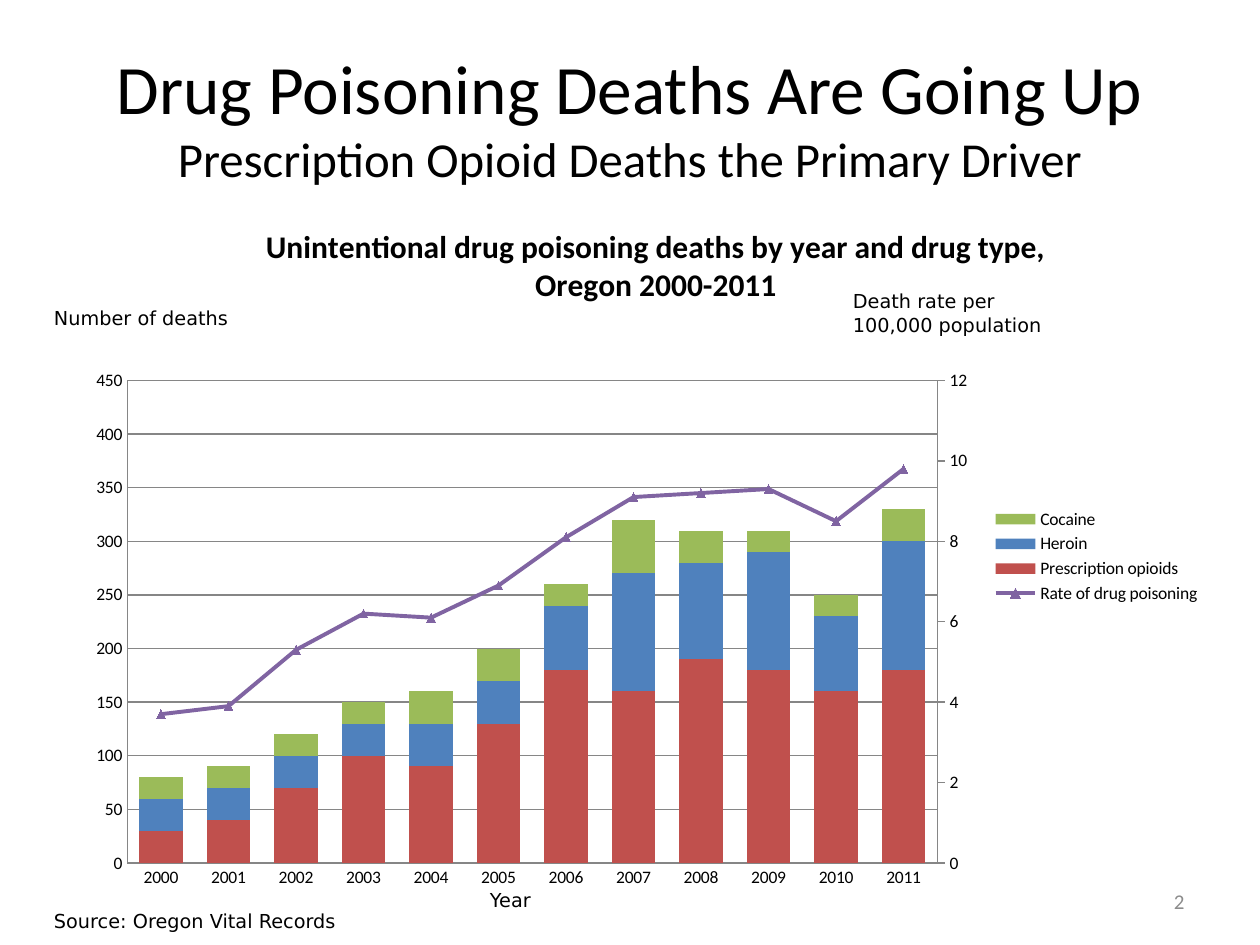
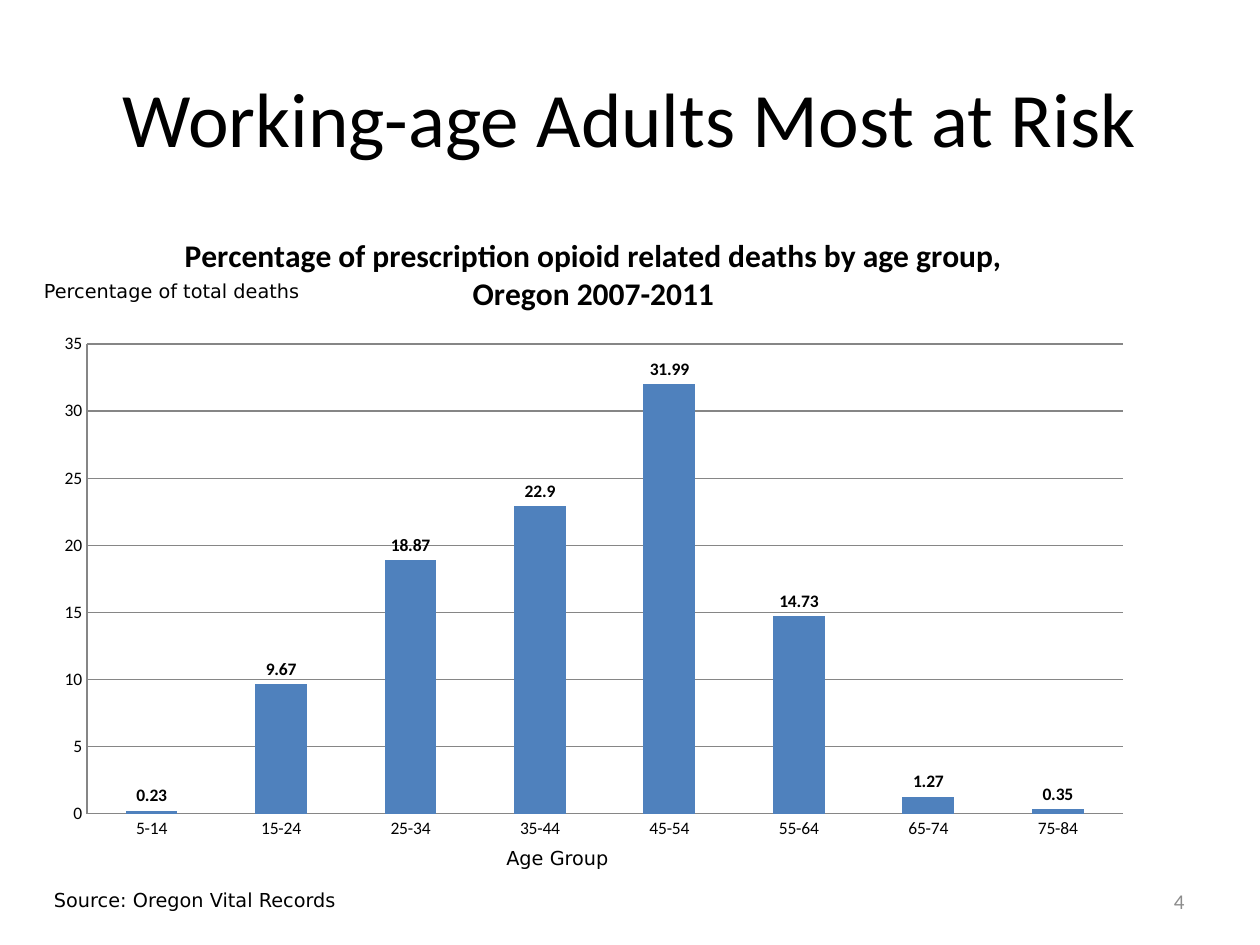
from pptx import Presentation
from pptx import util as u
from pptx.chart.axis import ValueAxis
from pptx.chart.data import CategoryChartData
from pptx.dml.color import RGBColor
from pptx.enum import chart as ch, text
from pptx.oxml import parse_xml
from pptx.oxml.ns import nsdecls, qn

BLACK = RGBColor(0x00, 0x00, 0x00)
NUMBER_GRAY = RGBColor(0x8C, 0x8C, 0x8C)
GRID_GRAY = RGBColor(0x86, 0x86, 0x86)
RED = RGBColor(0xC0, 0x50, 0x4D)
BLUE = RGBColor(0x4F, 0x81, 0xBD)
GREEN = RGBColor(0x9B, 0xBB, 0x59)
PURPLE = RGBColor(0x80, 0x64, 0xA2)

HEADING_FONT = "Calibri"
LABEL_FONT = "DejaVu Sans"
SOURCE = "Source: Oregon Vital Records"

YEARS = [str(year) for year in range(2000, 2012)]
DEATHS = [
    ("Prescription opioids", RED,
     [30, 40, 70, 100, 90, 130, 180, 160, 190, 180, 160, 180]),
    ("Heroin", BLUE,
     [30, 30, 30, 30, 40, 40, 60, 110, 90, 110, 70, 120]),
    ("Cocaine", GREEN,
     [20, 20, 20, 20, 30, 30, 20, 50, 30, 20, 20, 30]),
]
RATE = ("Rate of drug poisoning", PURPLE,
        [3.7, 3.9, 5.3, 6.2, 6.1, 6.9, 8.1, 9.1, 9.2, 9.3, 8.5, 9.8])
AGE_GROUPS = ["5-14"] + [f"{age}-{age + 9}" for age in range(15, 76, 10)]
AGE_SHARES = [0.23, 9.67, 18.87, 22.9, 31.99, 14.73, 1.27, 0.35]


def box(left, top, width, height):
    return [u.Inches(value) for value in (left, top, width, height)]


def add_run(paragraph, words, size, font=HEADING_FONT, color=BLACK):
    run = paragraph.add_run()
    run.text = words
    run.font.size = u.Pt(size)
    run.font.name = font
    run.font.color.rgb = color
    return run


def add_titled_slide(prs, title_lines, number):
    slide = prs.slides.add_slide(prs.slide_layouts[5])
    title = slide.shapes.title
    title.left, title.top, title.width, title.height = box(0.5, 0.3, 9, 1.25)
    frame = title.text_frame
    frame.auto_size = text.MSO_AUTO_SIZE.NONE
    frame.vertical_anchor = text.MSO_ANCHOR.MIDDLE
    paragraph = frame.paragraphs[0]
    paragraph.alignment = text.PP_ALIGN.CENTER
    for index, (words, size) in enumerate(title_lines):
        if index:
            paragraph.add_line_break()
        add_run(paragraph, words, size)
    add_page_number(slide, number)
    return slide


def add_page_number(slide, number):
    frame = slide.shapes.add_textbox(*box(7.17, 6.95, 2.33, 0.4)).text_frame
    frame.word_wrap = True
    frame.vertical_anchor = text.MSO_ANCHOR.MIDDLE
    paragraph = frame.paragraphs[0]
    paragraph.alignment = text.PP_ALIGN.RIGHT
    add_run(paragraph, str(number), 12, color=NUMBER_GRAY)


def add_label(slide, place, *lines):
    frame = slide.shapes.add_textbox(*box(*place)).text_frame
    frame.word_wrap = False
    frame.auto_size = text.MSO_AUTO_SIZE.SHAPE_TO_FIT_TEXT
    for index, line in enumerate(lines):
        paragraph = frame.add_paragraph() if index else frame.paragraphs[0]
        add_run(paragraph, line, 11, LABEL_FONT)


def set_layout(parent, position, chart_size, inches, inner=False):
    for old in parent.findall(qn("c:layout")):
        parent.remove(old)
    target = '<c:layoutTarget val="inner"/>' if inner else ""
    modes = '<c:xMode val="edge"/><c:yMode val="edge"/>'
    sizes = "".join(f'<c:{key} val="{length / whole}"/>' for key, length, whole
                    in zip("xywh", inches, chart_size * 2))
    parent.insert(position, parse_xml(
        f'<c:layout {nsdecls("c")}><c:manualLayout>{target}{modes}{sizes}'
        "</c:manualLayout></c:layout>"))


def plot_area(chart):
    return chart.element.xpath("c:chart/c:plotArea")[0]


def style_axis(axis, maximum=None, step=None, tick=ch.XL_TICK_MARK.NONE):
    axis.major_tick_mark = tick
    axis.minor_tick_mark = ch.XL_TICK_MARK.NONE
    axis.format.line.color.rgb = GRID_GRAY
    axis.format.line.width = u.Pt(0.75)
    if maximum:
        axis.minimum_scale = 0
        axis.maximum_scale = maximum
        axis.major_unit = step


def add_column_chart(slide, place, kind, categories, series, title_lines,
                     title_at, plot_at, gap, maximum, step):
    data = CategoryChartData()
    data.categories = categories
    for name, _, values in series:
        data.add_series(name, values)
    chart = slide.shapes.add_chart(kind, *box(*place), data).chart
    chart.font.size = u.Pt(10)
    chart.font.name = HEADING_FONT
    chart.font.color.rgb = BLACK
    chart.has_legend = False

    frame = chart.chart_title.text_frame
    for index, line in enumerate(title_lines):
        paragraph = frame.add_paragraph() if index else frame.paragraphs[0]
        paragraph.alignment = text.PP_ALIGN.CENTER
        add_run(paragraph, line, 18).font.bold = True
    set_layout(chart.chart_title.element, 1, place[2:], title_at)
    set_layout(plot_area(chart), 0, place[2:], plot_at, inner=True)

    plot = chart.plots[0]
    plot.vary_by_categories = False
    plot.gap_width = gap
    for column, (_, color, _) in zip(plot.series, series):
        column.format.fill.solid()
        column.format.fill.fore_color.rgb = color

    style_axis(chart.category_axis)
    style_axis(chart.value_axis, maximum, step)
    grid = chart.value_axis.major_gridlines.format.line
    grid.color.rgb = GRID_GRAY
    grid.width = u.Pt(0.75)
    return chart


def move_last_series_to_right_axis(chart, color, maximum, step):
    area = plot_area(chart)
    bars = area.find(qn("c:barChart"))
    rate = bars.findall(qn("c:ser"))[-1]
    for tag in ("c:invertIfNegative", "c:spPr"):
        for part in rate.findall(qn(tag)):
            rate.remove(part)
    lines = parse_xml(
        f'<c:lineChart {nsdecls("c")}><c:grouping val="standard"/>'
        '<c:varyColors val="0"/><c:marker val="1"/>'
        '<c:axId val="5001"/><c:axId val="5002"/></c:lineChart>')
    lines.insert(2, rate)
    bars.addnext(lines)
    right_axis = parse_xml(
        f'<c:valAx {nsdecls("c")}><c:axId val="5002"/>'
        '<c:scaling><c:orientation val="minMax"/></c:scaling>'
        '<c:delete val="0"/><c:axPos val="r"/>'
        '<c:numFmt formatCode="General" sourceLinked="0"/>'
        '<c:tickLblPos val="nextTo"/><c:crossAx val="5001"/>'
        '<c:crosses val="max"/></c:valAx>')
    hidden_axis = parse_xml(
        f'<c:catAx {nsdecls("c")}><c:axId val="5001"/>'
        '<c:scaling><c:orientation val="minMax"/></c:scaling>'
        '<c:delete val="1"/><c:axPos val="b"/><c:crossAx val="5002"/>'
        '<c:crosses val="autoZero"/></c:catAx>')
    left_axis = area.findall(qn("c:valAx"))[-1]
    left_axis.addnext(right_axis)
    right_axis.addnext(hidden_axis)
    style_axis(ValueAxis(right_axis), maximum, step, ch.XL_TICK_MARK.OUTSIDE)

    line = chart.plots[1].series[0]
    line.smooth = False
    line.format.line.color.rgb = color
    line.format.line.width = u.Pt(2.25)
    line.marker.style = ch.XL_MARKER_STYLE.TRIANGLE
    line.marker.size = 5
    line.marker.format.fill.solid()
    line.marker.format.fill.fore_color.rgb = color
    line.marker.format.line.color.rgb = color


def add_trend_slide(prs):
    slide = add_titled_slide(prs, [
        ("Drug Poisoning Deaths Are Going Up", 39.6),
        ("Prescription Opioid Deaths the Primary Driver", 27.9)], 2)
    chart = add_column_chart(
        slide, (0.58, 1.67, 9.05, 5.49), ch.XL_CHART_TYPE.COLUMN_STACKED,
        YEARS, DEATHS + [RATE],
        ["Unintentional drug poisoning deaths by year and drug type,",
         "Oregon 2000-2011"],
        (1.5, 0.09), (0.43, 1.35, 6.43, 3.83),
        gap=55, maximum=450, step=50)
    chart.plots[0].overlap = 100
    move_last_series_to_right_axis(chart, RATE[1], 12, 2)
    chart.has_legend = True
    chart.legend.position = ch.XL_LEGEND_POSITION.RIGHT
    chart.legend.include_in_layout = False
    add_label(slide, (0.33, 2.38, 1.6, 0.29), "Number of deaths")
    add_label(slide, (6.67, 2.25, 1.71, 0.47), "Death rate per", "100,000 population")
    add_label(slide, (0.33, 7.17, 2.49, 0.29), SOURCE)
    add_label(slide, (3.79, 7, 0.55, 0.29), "Year")


def add_age_slide(prs):
    slide = add_titled_slide(prs, [("Working-age Adults Most at Risk", 44)], 4)
    chart = add_column_chart(
        slide, (0.33, 1.69, 8.75, 5.06), ch.XL_CHART_TYPE.COLUMN_CLUSTERED,
        AGE_GROUPS, [("Series 1", BLUE, AGE_SHARES)],
        ["Percentage of prescription opioid related deaths by age group, "
         "Oregon 2007-2011"],
        (1.09, 0.12), (0.36, 1.04, 8.22, 3.73),
        gap=150, maximum=35, step=5)
    labels = chart.plots[0].series[0].data_labels
    labels.show_value = True
    labels.position = ch.XL_LABEL_POSITION.OUTSIDE_END
    labels.font.bold = True
    labels.font.size = u.Pt(10)
    add_label(slide, (0.33, 7, 2.49, 0.29), SOURCE)
    add_label(slide, (0.25, 2.17, 2.25, 0.29), "Percentage of total deaths")
    add_label(slide, (3.92, 6.67, 1.02, 0.29), "Age Group")


def main():
    prs = Presentation()
    prs.slide_width, prs.slide_height = u.Inches(10), u.Inches(7.5)
    add_trend_slide(prs)
    add_age_slide(prs)
    prs.save("out.pptx")


if __name__ == "__main__":
    main()
